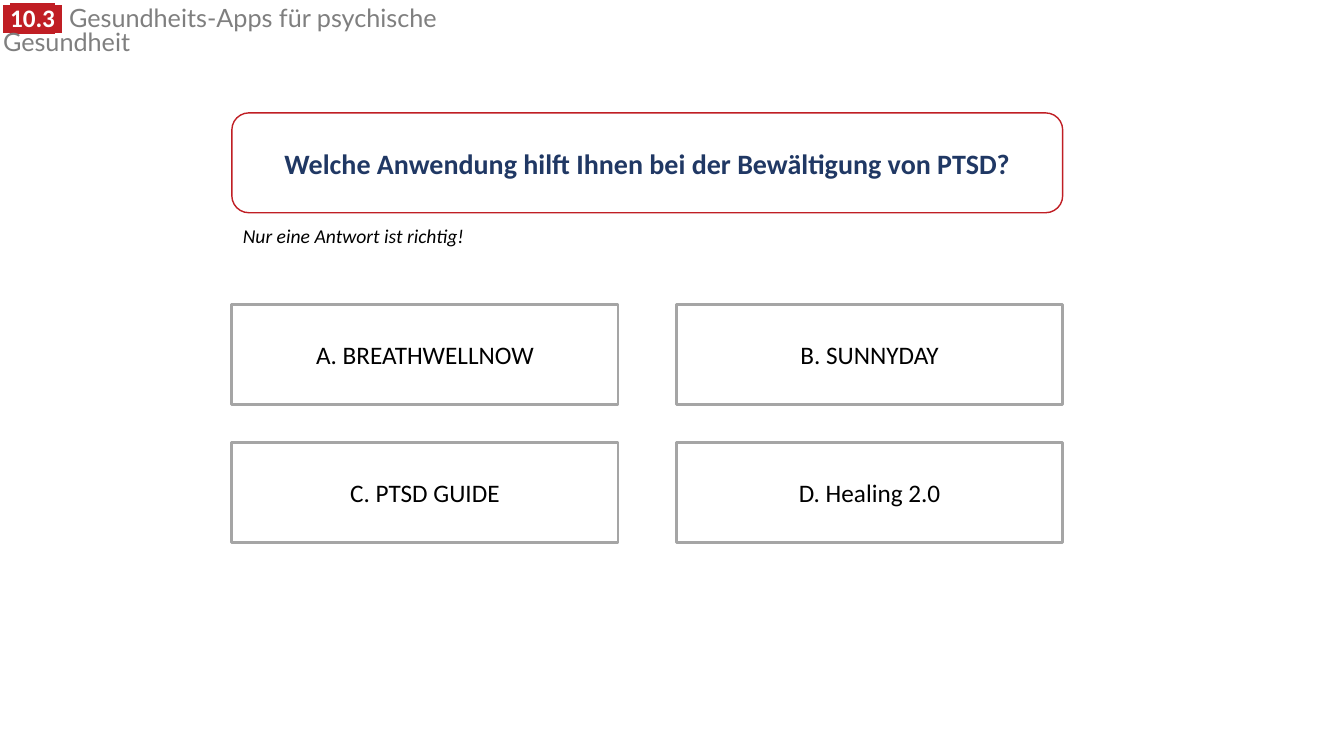
from dataclasses import dataclass

from lxml import etree
from pptx import Presentation
from pptx.dml.color import RGBColor
from pptx.enum.shapes import MSO_SHAPE
from pptx.enum.text import MSO_ANCHOR, MSO_AUTO_SIZE, PP_ALIGN
from pptx.oxml.ns import qn
from pptx.util import Pt

PX = 9144  # EMU per px, 100 px to the inch
TITLE_ONLY = 5
LEFT, CENTER = PP_ALIGN.LEFT, PP_ALIGN.CENTER
TOP, MIDDLE = MSO_ANCHOR.TOP, MSO_ANCHOR.MIDDLE
GROW = MSO_AUTO_SIZE.SHAPE_TO_FIT_TEXT
RECT, ROUND_RECT = MSO_SHAPE.RECTANGLE, MSO_SHAPE.ROUNDED_RECTANGLE


@dataclass(frozen=True)
class Theme:
    white: str = "FFFFFF"
    black: str = "000000"
    red: str = "C01E24"
    navy: str = "203864"
    gray: str = "7F7F7F"
    border: str = "A5A5A5"
    body_font: str = "Calibri"
    title_font: str = "Lato"
    badge_font: str = "Arial"
    question_size: int = 20
    text_size: int = 18
    hint_size: int = 14


theme = Theme()


def add_run(p, text, size, color, font=theme.body_font, bold=False, italic=False):
    r = p.add_run()
    r.text = text
    r.font.size = Pt(size)
    r.font.bold = bold
    r.font.italic = italic
    r.font.color.rgb = RGBColor.from_string(color)
    r.font.name = font
    return r


def add_box(kind, x, y, w, h, line, weight):
    """Add a white outlined shape and return it with its centred paragraph."""
    sp = s.shapes.add_shape(kind, x * PX, y * PX, w * PX, h * PX)
    sp.shadow.inherit = False
    sp.fill.solid()
    sp.fill.fore_color.rgb = RGBColor.from_string(theme.white)
    sp.line.color.rgb = RGBColor.from_string(line)
    sp.line.width = Pt(weight)
    tf = sp.text_frame
    tf.word_wrap = True
    tf.vertical_anchor = MIDDLE
    p = tf.paragraphs[0]
    p.alignment = CENTER
    return sp, p


prs = Presentation()
prs.slide_width, prs.slide_height = 1333 * PX, 750 * PX
s = prs.slides.add_slide(prs.slide_layouts[TITLE_ONLY])

# Title with a highlighted section number
title = s.shapes.title
title.left, title.top, title.width, title.height = -7 * PX, 3 * PX, 543 * PX, 34 * PX
tf = title.text_frame
tf.word_wrap = True
tf.auto_size = GROW
tf.vertical_anchor = TOP
p = tf.paragraphs[0]
p.alignment = LEFT
p.line_spacing = 0.8
for text, font in ((" ", theme.badge_font), ("10.3", theme.body_font), (" ", theme.badge_font)):
    r = add_run(p, text, theme.text_size, theme.white, font, bold=True)
    highlight = etree.Element(qn("a:highlight"))
    etree.SubElement(highlight, qn("a:srgbClr"), val=theme.red)
    r.font._element.find(qn("a:solidFill")).addnext(highlight)
add_run(p, " ", theme.text_size, theme.gray, theme.badge_font)
add_run(p, "Gesundheits-Apps für psychische Gesundheit", theme.text_size, theme.gray, theme.title_font)

# Question and hint
question, p = add_box(ROUND_RECT, 230, 112, 824, 99, theme.red, 1)
question.adjustments[0] = 0.17
add_run(p, "Welche Anwendung hilft Ihnen bei der Bewältigung von PTSD?",
        theme.question_size, theme.navy, bold=True)

hint = s.shapes.add_textbox(231 * PX, 217 * PX, 289 * PX, 34 * PX)
hint.text_frame.word_wrap = True
hint.text_frame.auto_size = GROW
add_run(hint.text_frame.paragraphs[0], "Nur eine Antwort ist richtig!",
        theme.hint_size, theme.black, italic=True)

# Answers in a two by two grid
answers = ("A. BREATHWELLNOW", "B. SUNNYDAY", "C. PTSD GUIDE", "D. Healing 2.0")
for i, answer in enumerate(answers):
    row, col = divmod(i, 2)
    sp, p = add_box(RECT, 230 + col * 441, 302 + row * 137, 383, 99, theme.border, 2)
    add_run(p, answer, theme.text_size, theme.black)

prs.save("out.pptx")
